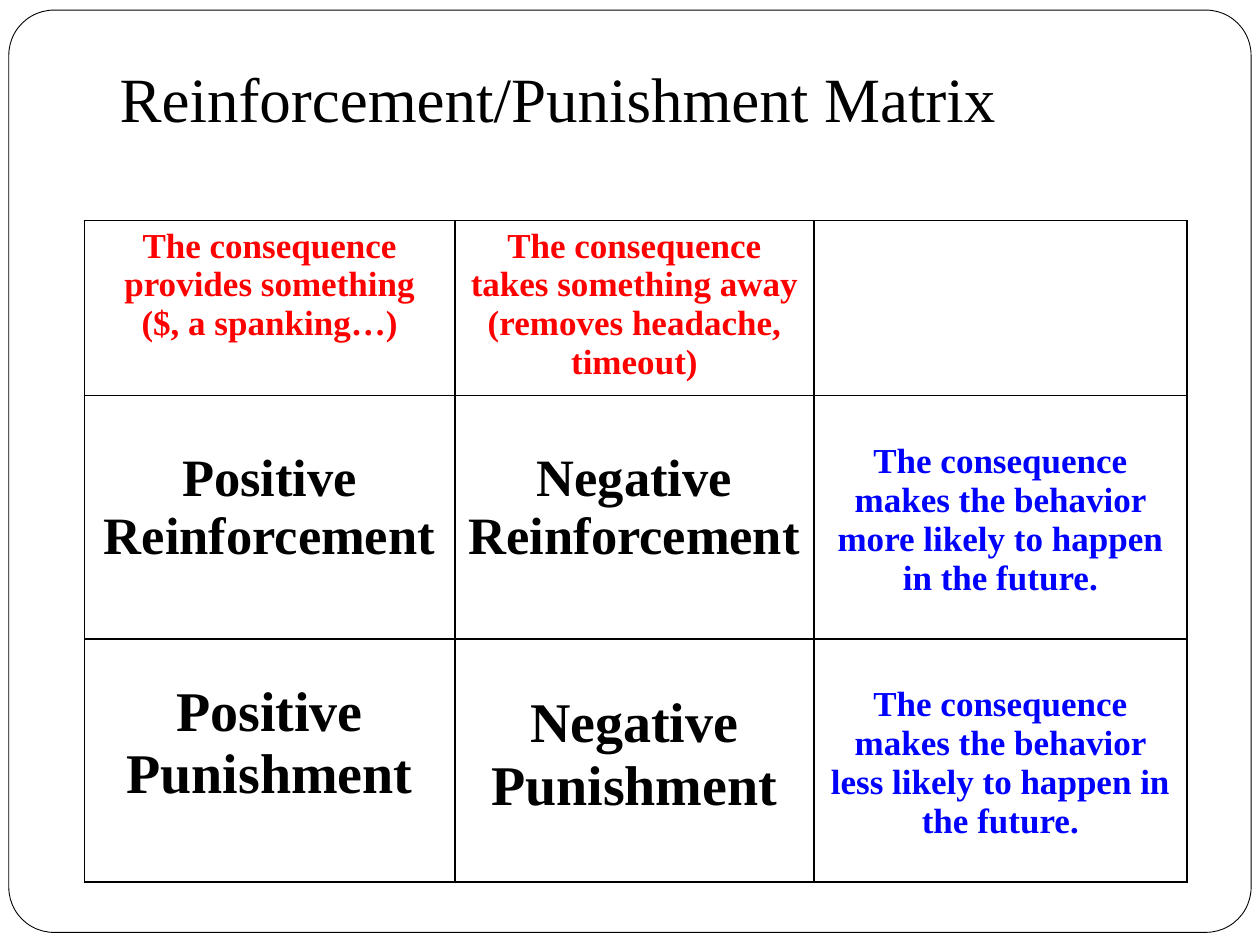
from lxml import etree
from pptx import Presentation
from pptx.dml.color import RGBColor
from pptx.enum.shapes import MSO_SHAPE as Shape
from pptx.enum.text import MSO_ANCHOR as Anchor, MSO_AUTO_SIZE as AutoSize, PP_ALIGN as Align
from pptx.oxml.ns import qn
from pptx.util import Inches, Pt

COLORS = {"text": "000000", "paper": "FFFFFF", "consequence": "FF0000", "effect": "0000FF"}
FONT = "Times New Roman"

# Each cell: lines, size, color, top margin in inches
MATRIX = [
    [
        (["The consequence provides something", "($, a spanking…)"], 20, "consequence", 0.05),
        (["The consequence takes something away (removes headache, timeout)"],
         20, "consequence", 0.05),
        None,
    ],
    [
        (["Positive Reinforcement"], 30, "text", 0.43),
        (["Negative Reinforcement"], 30, "text", 0.43),
        (["The consequence makes the behavior more likely to happen in the future."],
         20, "effect", 0.37),
    ],
    [
        (["Positive Punishment"], 32, "text", 0.34),
        (["Negative Punishment"], 32, "text", 0.43),
        (["The consequence makes the behavior less likely to happen in the future."],
         20, "effect", 0.37),
    ],
]


class SlideBuilder:
    """Holds the style and the current slide."""

    def __init__(self, presentation, font, colors):
        self.font = font
        self.colors = {name: RGBColor.from_string(value) for name, value in colors.items()}
        self.slide = presentation.slides.add_slide(presentation.slide_layouts[5])

    def run(self, paragraph, text, size, color="text", bold=False):
        run = paragraph.add_run()
        run.text = text
        run.font.name = self.font
        run.font.size = Pt(size)
        run.font.bold = bold
        run.font.color.rgb = self.colors[color]

    def frame(self, left, top, width, height):
        """Add the rounded page frame behind the title."""
        shape = self.slide.shapes.add_shape(
            Shape.ROUNDED_RECTANGLE, Inches(left), Inches(top), Inches(width), Inches(height))
        shape.adjustments[0] = 0.049
        shape.shadow.inherit = False
        shape.fill.solid()
        shape.fill.fore_color.rgb = self.colors["paper"]
        shape.line.color.rgb = self.colors["text"]
        shape.line.width = Pt(0.5)
        self.slide.shapes.title.element.addprevious(shape.element)

    def title(self, text, left, top, width, height):
        title = self.slide.shapes.title
        title.left, title.top = Inches(left), Inches(top)
        title.width, title.height = Inches(width), Inches(height)
        text_frame = title.text_frame
        text_frame.word_wrap = True
        text_frame.auto_size = AutoSize.NONE
        text_frame.vertical_anchor = Anchor.TOP
        text_frame.margin_top = Inches(0.1)
        paragraph = text_frame.paragraphs[0]
        paragraph.alignment = Align.LEFT
        self.run(paragraph, text, 36)

    def cell_borders(self, cell):
        properties = cell._tc.get_or_add_tcPr()
        for position, side in enumerate(("lnL", "lnR", "lnT", "lnB")):
            line = etree.Element(qn(f"a:{side}"), w=str(Pt(1)))
            fill = etree.SubElement(line, qn("a:solidFill"))
            etree.SubElement(fill, qn("a:srgbClr"), val=str(self.colors["text"]))
            properties.insert(position, line)

    def table(self, rows, left, top, widths, heights):
        table = self.slide.shapes.add_table(
            len(heights), len(widths), Inches(left), Inches(top),
            Inches(sum(widths)), Inches(sum(heights))).table
        table.first_row = table.horz_banding = False
        for column, width in zip(table.columns, widths):
            column.width = Inches(width)
        for row, height, contents in zip(table.rows, heights, rows):
            row.height = Inches(height)
            for cell, content in zip(row.cells, contents):
                cell.fill.background()
                self.cell_borders(cell)
                if content:
                    self.cell_text(cell, *content)

    def cell_text(self, cell, lines, size, color, margin_top):
        cell.margin_top = Inches(margin_top)
        paragraph = cell.text_frame.paragraphs[0]
        paragraph.alignment = Align.CENTER
        for index, line in enumerate(lines):
            if index:
                paragraph.add_line_break()
            self.run(paragraph, line, size, color, bold=True)


def main():
    presentation = Presentation()
    presentation.slide_width, presentation.slide_height = Inches(10), Inches(7.5)
    builder = SlideBuilder(presentation, FONT, COLORS)
    builder.frame(0.07, 0.08, 9.86, 7.32)
    builder.title("Reinforcement/Punishment Matrix", 0.85, 0.37, 8.31, 1.3)
    builder.table(MATRIX, 0.67, 1.75, widths=[2.94, 2.85, 2.96], heights=[1.39, 1.93, 1.93])
    presentation.save("out.pptx")


if __name__ == "__main__":
    main()
